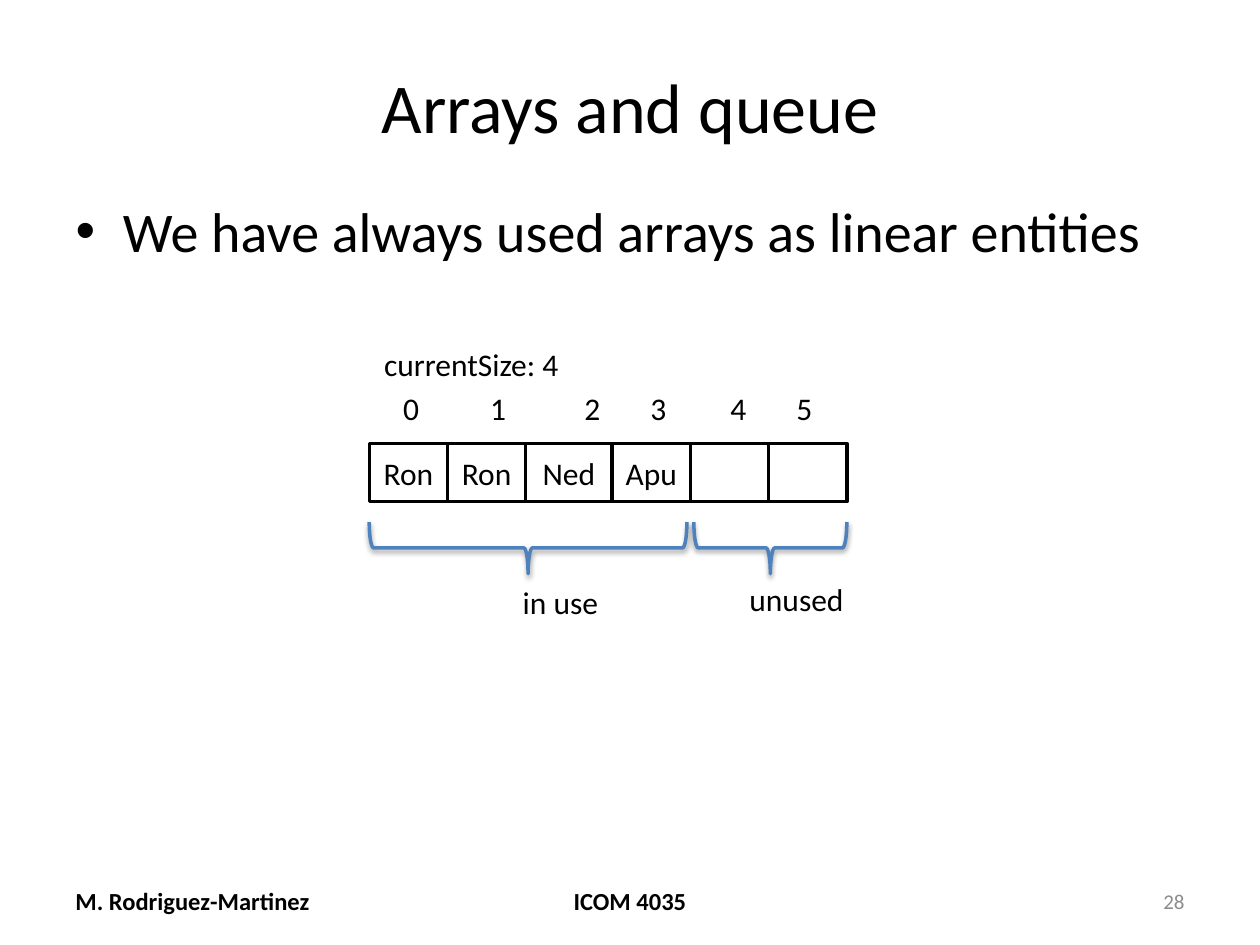
"""Build the slide that shows an array queue with used and unused cells."""
from itertools import accumulate

from lxml import etree
from pptx import Presentation
from pptx import util as u
from pptx.dml.color import RGBColor
from pptx.enum import shapes, text
from pptx.oxml import ns

BLACK = RGBColor(0x00, 0x00, 0x00)
WHITE = RGBColor(0xFF, 0xFF, 0xFF)
GRAY = RGBColor(0x8C, 0x8C, 0x8C)
BLUE = RGBColor(0x4F, 0x81, 0xBD)
FONT = "Calibri"
LEFT, CENTER, RIGHT = text.PP_ALIGN.LEFT, text.PP_ALIGN.CENTER, text.PP_ALIGN.RIGHT

NAMES = ["Ron", "Ron", "Ned", "Apu", "", ""]
CELL_WIDTHS = [44.7, 44.7, 49.4, 44.7, 44.7, 44.7]
ARRAY_LEFT, ARRAY_TOP, CELL_HEIGHT = 211, 253.5, 33.2
INDEX_TABS = [49.8, 103.7, 141.3, 187.1, 224.8]
BRACE_TOP, BRACE_DEPTH = 298.3, 29.5


def write(shape, words, size, color=BLACK, bold=False, align=LEFT):
    """Put one formatted paragraph into a shape."""
    para = shape.text_frame.paragraphs[0]
    para.text = words
    para.alignment = align
    for span in para.runs:
        span.font.name = FONT
        span.font.size = u.Pt(size)
        span.font.bold = bold
        span.font.color.rgb = color
    return para


def fill_placeholder(box, words, size, bounds, align):
    """Move a template placeholder and write its text."""
    box.left, box.top, box.width, box.height = map(u.Pt, bounds)
    write(box, words, size, align=align)


def add_label(page, words, left, top, width):
    """Add an unwrapped diagram label and return its paragraph."""
    box = page.shapes.add_textbox(*map(u.Pt, (left, top, width, 29)))
    box.text_frame.word_wrap = False
    return write(box, words, 18)


def add_indices(page):
    """Add the row of array indices, spaced by tab stops."""
    para = add_label(page, "\t".join(map(str, range(len(NAMES)))), 223.2, 219, 250.6)
    stops = etree.SubElement(para._p.get_or_add_pPr(), ns.qn("a:tabLst"))
    for position in INDEX_TABS:
        etree.SubElement(stops, ns.qn("a:tab"), pos=str(u.Pt(position)), algn="l")


def add_footer(page, words, left, width, align, size=14, color=BLACK, bold=True):
    """Add one part of the footer line."""
    box = page.shapes.add_textbox(*map(u.Pt, (left, 500.5, width, 28.75)))
    box.text_frame.word_wrap = True
    box.text_frame.vertical_anchor = text.MSO_ANCHOR.MIDDLE
    write(box, words, size, color, bold, align)


def add_cell(page, name, left, width):
    """Add one array cell."""
    cell = page.shapes.add_shape(
        shapes.MSO_SHAPE.RECTANGLE, *map(u.Pt, (left, ARRAY_TOP, width, CELL_HEIGHT)))
    cell.shadow.inherit = False
    cell.fill.solid()
    cell.fill.fore_color.rgb = WHITE
    cell.line.color.rgb = BLACK
    cell.line.width = u.Pt(2)
    if name:
        write(cell, name, 18, align=CENTER)


def add_brace(page, left, right):
    """Add a downward brace with a soft shadow between two edges."""
    span = right - left
    middle_x, middle_y = (left + right) / 2, BRACE_TOP + BRACE_DEPTH / 2
    brace = page.shapes.add_shape(
        shapes.MSO_SHAPE.LEFT_BRACE,
        *map(u.Pt, (middle_x - BRACE_DEPTH / 2, middle_y - span / 2, BRACE_DEPTH, span)))
    brace.rotation = 270
    brace.fill.background()
    brace.line.color.rgb = BLUE
    brace.line.width = u.Pt(2)
    brace.shadow.inherit = False
    effects = brace._element.spPr.find(ns.qn("a:effectLst"))
    shadow = etree.SubElement(
        effects, ns.qn("a:outerShdw"), blurRad=str(u.Pt(3.1)), dist=str(u.Pt(1.6)),
        dir="5400000", rotWithShape="0")
    color = etree.SubElement(shadow, ns.qn("a:srgbClr"), val=str(BLACK))
    etree.SubElement(color, ns.qn("a:alpha"), val="38000")


def main():
    """Build and save the deck."""
    deck = Presentation()
    deck.slide_width, deck.slide_height = u.Pt(720), u.Pt(540)
    page = deck.slides.add_slide(deck.slide_layouts[1])
    fill_placeholder(page.shapes.title, "Arrays and queue", 40, (36, 21.6, 648, 77), CENTER)
    fill_placeholder(page.placeholders[1], "We have always used arrays as linear entities",
                     32, (36, 108.7, 648, 373.7), LEFT)

    add_footer(page, "M. Rodriguez-Martinez", 36, 168, LEFT)
    add_footer(page, "ICOM 4035", 246, 228, CENTER)
    add_footer(page, "28", 516, 168, RIGHT, size=12, color=GRAY, bold=False)

    edges = list(accumulate(CELL_WIDTHS, initial=ARRAY_LEFT))
    for name, left, width in zip(NAMES, edges, CELL_WIDTHS):
        add_cell(page, name, left, width)
    add_indices(page)
    add_label(page, "currentSize: 4", 212.4, 193.7, 116)
    add_brace(page, edges[0], edges[4] - 2)
    add_label(page, "in use", 291.6, 329.8, 58.3)
    add_brace(page, edges[4] + 2, edges[6])
    add_label(page, "unused", 421.2, 327.6, 69)
    deck.save("out.pptx")


if __name__ == "__main__":
    main()
